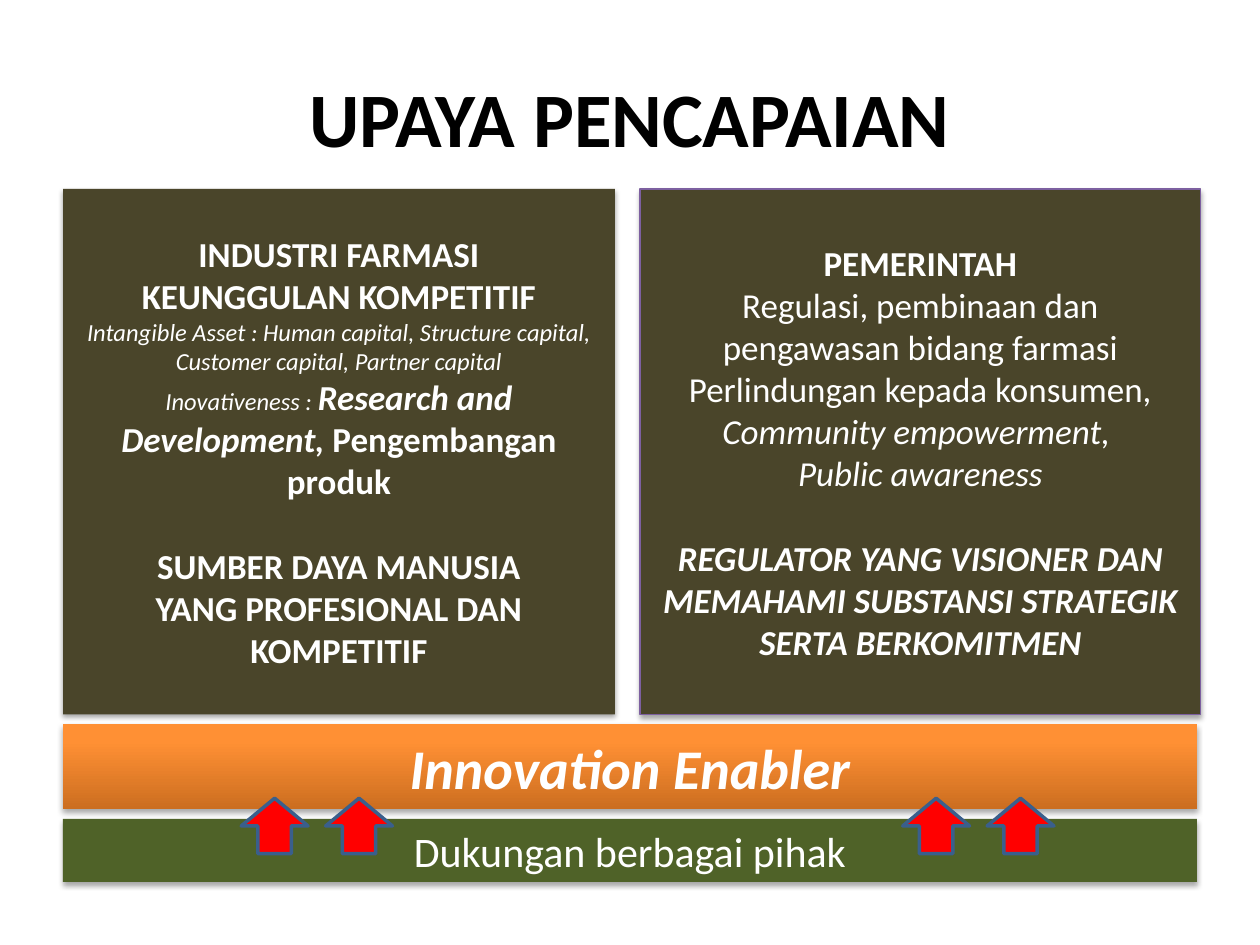
from copy import deepcopy
from dataclasses import dataclass

from lxml.etree import SubElement
from pptx import Presentation
from pptx.dml.color import RGBColor as Rgb
from pptx.enum.shapes import MSO_SHAPE as Kind
from pptx.enum.text import MSO_ANCHOR as Anchor, PP_ALIGN as Align
from pptx.oxml.ns import qn
from pptx.util import Inches, Pt


@dataclass(frozen=True)
class Theme:
    font: str = "Calibri"
    ink: str = "000000"
    white: str = "FFFFFF"
    olive: str = "4A452A"
    green: str = "4F6228"
    purple: str = "7D60A0"
    red: str = "FF0000"
    blue: str = "3A5F8C"
    glow: tuple = ((0, "CC6E20"), (0.8, "FF9034"), (1, "FF9136"))
    title: int = 44
    banner: int = 32
    base: int = 24
    body: int = 20
    small: int = 14


class Deck:
    def __init__(self, theme):
        self.theme = theme
        self.prs = Presentation()
        self.prs.slide_width, self.prs.slide_height = Inches(10), Inches(7.5)
        self.slide = self.prs.slides.add_slide(self.prs.slide_layouts[6])

    def label(self, shape, paras, color):
        """Each paragraph is (gap before, runs); a run is (text, size, style)."""
        frame = shape.text_frame
        frame.word_wrap = True
        frame.vertical_anchor = Anchor.MIDDLE
        frame.text = "\n".join(runs[0][0] for _, runs in paras)
        for para, (gap, runs) in zip(frame.paragraphs, paras):
            para.alignment = Align.CENTER
            para.space_before = Pt(gap)
            for text, *_ in runs[1:]:
                para.add_run().text = text
            for run, (_, size, style) in zip(para.runs, runs):
                font = run.font
                font.name, font.size = self.theme.font, Pt(size)
                font.bold, font.italic = "b" in style, "i" in style
                font.color.rgb = Rgb.from_string(color)

    def title(self, box, text):
        shape = self.slide.shapes.add_textbox(*map(Inches, box))
        self.label(shape, [(0, [(text, self.theme.title, "b")])], self.theme.ink)

    def shape(self, kind, box, fill, line=None, width=0.75):
        shape = self.slide.shapes.add_shape(kind, *map(Inches, box))
        shape.shadow.inherit = False
        if isinstance(fill, str):
            shape.fill.solid()
            shape.fill.fore_color.rgb = Rgb.from_string(fill)
        else:
            self.blend(shape, fill)
        if line:
            shape.line.color.rgb = Rgb.from_string(line)
            shape.line.width = Pt(width)
        else:
            shape.line.fill.background()
        return shape

    def blend(self, shape, stops):
        fill = shape.fill
        fill.gradient()
        fill.gradient_angle = 90
        group = shape._element.spPr.find(".//" + qn("a:gsLst"))
        for _ in stops[2:]:
            group.append(deepcopy(group[-1]))
        for stop, (pos, color) in zip(fill.gradient_stops, stops):
            stop.position = pos
            stop.color.rgb = Rgb.from_string(color)

    def shade(self, shape):
        effect = shape._element.spPr.find(qn("a:effectLst"))
        outer = SubElement(effect, qn("a:outerShdw"), blurRad=str(Pt(3.1)),
                           dist=str(Pt(1.8)), dir="5400000", rotWithShape="0")
        color = SubElement(outer, qn("a:srgbClr"), val="000000")
        SubElement(color, qn("a:alpha"), val="35000")

    def panel(self, box, fill, paras, line=None):
        shape = self.shape(Kind.RECTANGLE, box, fill, line)
        self.shade(shape)
        self.label(shape, paras, self.theme.white)

    def arrow(self, left, top):
        shape = self.shape(Kind.RIGHT_ARROW, (left, top, 0.44, 0.53),
                           self.theme.red, self.theme.blue, 2)
        shape.rotation = 270


def main():
    look = Theme()
    deck = Deck(look)
    body, small = look.body, look.small
    gap = 24.4  # one line of body text

    deck.title((0.5, 0.3, 9, 1.25), "UPAYA PENCAPAIAN")

    # Two pillars: industry and government
    deck.panel((0.5, 1.5, 4.38, 4.17), look.olive, [
        (0, [("INDUSTRI FARMASI", body, "b")]),
        (0, [("KEUNGGULAN KOMPETITIF", body, "b")]),
        (0, [("Intangible Asset : Human capital, Structure capital, "
              "Customer capital, Partner capital", small, "i")]),
        (0, [("Inovativeness : ", small, "i"),
             ("Research and Development, ", body, "bi"),
             ("Pengembangan produk", body, "b")]),
        (gap, [("SUMBER DAYA MANUSIA", body, "b")]),
        (0, [("YANG PROFESIONAL DAN KOMPETITIF", body, "b")]),
    ])
    deck.panel((5.08, 1.5, 4.45, 4.17), look.olive, [
        (0, [("PEMERINTAH", body, "b")]),
        (0, [("Regulasi, pembinaan dan pengawasan bidang farmasi", body, "")]),
        (0, [("Perlindungan kepada konsumen,", body, "")]),
        (0, [("Community empowerment, ", body, "i")]),
        (0, [("Public awareness", body, "i")]),
        (gap, [("REGULATOR YANG VISIONER DAN MEMAHAMI SUBSTANSI STRATEGIK "
                "SERTA BERKOMITMEN", body, "bi")]),
    ], look.purple)

    # Base bars
    deck.panel((0.5, 5.75, 9, 0.67), look.glow,
               [(0, [("Innovation Enabler", look.banner, "bi")])])
    deck.panel((0.5, 6.5, 9, 0.5), look.green,
               [(0, [("Dukungan berbagai pihak", look.base, "")])])

    # Two pairs of upward arrows
    for start in (7.21, 1.96):
        for step in range(2):
            deck.arrow(start + step * 0.67, 6.29)

    deck.prs.save("out.pptx")


if __name__ == "__main__":
    main()
